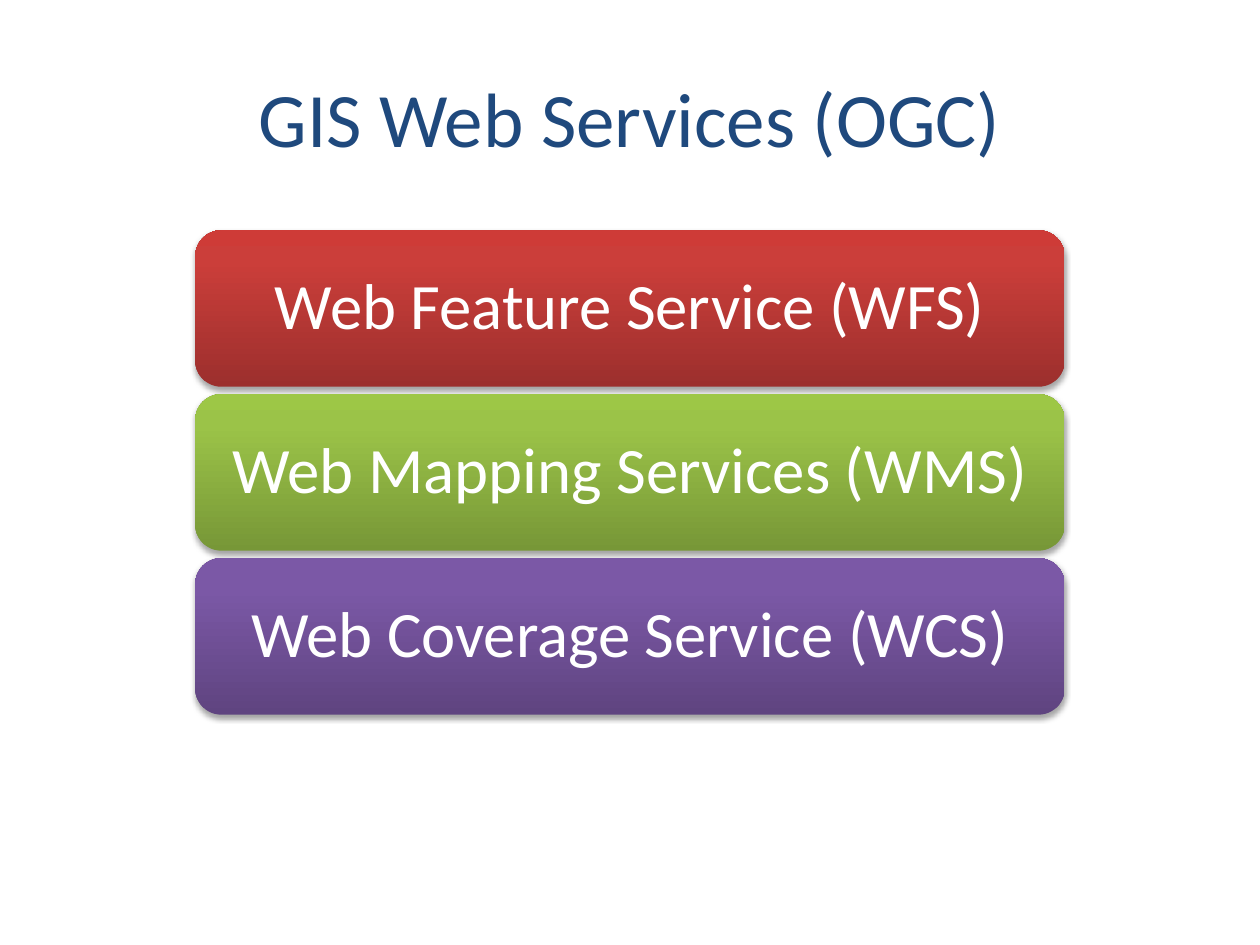
from lxml import etree
from pptx import Presentation
from pptx.dml.color import RGBColor
from pptx.enum import shapes, text
from pptx.oxml.ns import qn
from pptx.util import Pt

NAVY = RGBColor(0x1F, 0x49, 0x7D)
WHITE = RGBColor(0xFF, 0xFF, 0xFF)
BLACK = RGBColor(0, 0, 0)
RED = [RGBColor(0x9C, 0x2F, 0x2D), RGBColor(0xCB, 0x3E, 0x3A), RGBColor(0xCE, 0x3B, 0x37)]
GREEN = [RGBColor(0x77, 0x97, 0x37), RGBColor(0x9B, 0xC3, 0x48), RGBColor(0x9D, 0xC7, 0x46)]
PURPLE = [RGBColor(0x5F, 0x44, 0x80), RGBColor(0x7B, 0x58, 0xA6), RGBColor(0x7C, 0x57, 0xA8)]
STOPS = (0, 80, 100)
FONT = "Calibri"
SERVICES = [
    ("Web Feature Service (WFS)", RED),
    ("Web Mapping Services (WMS)", GREEN),
    ("Web Coverage Service (WCS)", PURPLE),
]


def add(parent, tag, **attrs):
    return etree.SubElement(parent, qn(tag), {k: str(v) for k, v in attrs.items()})


def shade(shape, colors):
    """Fill from bottom to top with one colour at each of STOPS."""
    shape.fill.gradient()
    shape.fill.gradient_angle = 90
    stops = shape._element.spPr.find(".//" + qn("a:gsLst"))
    for old in list(stops):
        stops.remove(old)
    for pos, color in zip(STOPS, colors):
        add(add(stops, "a:gs", pos=pos * 1000), "a:srgbClr", val=color)


def drop_shadow(shape):
    shape.shadow.inherit = False
    effects = shape._element.spPr.find(qn("a:effectLst"))
    outer = add(effects, "a:outerShdw", blurRad=Pt(3.1), dist=Pt(1.8),
                dir=90 * 60000, rotWithShape=0)
    add(add(outer, "a:srgbClr", val=BLACK), "a:alpha", val=35000)


def write(frame, words, size, color):
    frame.word_wrap = True
    frame.vertical_anchor = text.MSO_ANCHOR.MIDDLE
    para = frame.paragraphs[0]
    para.text = words
    para.alignment = text.PP_ALIGN.CENTER
    para.font.name = FONT
    para.font.size = Pt(size)
    para.font.color.rgb = color
    return para


def place_title(slide, left, top, width, height):
    title = slide.shapes.title
    title.left, title.top = Pt(left), Pt(top)
    title.width, title.height = Pt(width), Pt(height)
    write(title.text_frame, "GIS Web Services (OGC)", 44, NAVY)


def stack_bars(slide, left, top, width, height, gap=4.3):
    """Share the height of the box among the services."""
    count = len(SERVICES)
    tall = (height - gap * (count - 1)) / count
    for i, (name, colors) in enumerate(SERVICES):
        bar = slide.shapes.add_shape(
            shapes.MSO_SHAPE.ROUNDED_RECTANGLE,
            Pt(left), Pt(top + i * (tall + gap)), Pt(width), Pt(tall))
        shade(bar, colors)
        bar.line.fill.background()
        drop_shadow(bar)
        frame = bar.text_frame
        frame.margin_left = frame.margin_right = Pt(7)
        frame.margin_top = frame.margin_bottom = Pt(5.8)
        write(frame, name, 37, WHITE).line_spacing = 0.9


def main():
    deck = Presentation()
    deck.slide_width, deck.slide_height = Pt(720), Pt(540)
    slide = deck.slides.add_slide(deck.slide_layouts[5])
    place_title(slide, 36, 21.6, 648, 90)
    stack_bars(slide, 111.6, 131.6, 496.8, 276.8)
    deck.save("out.pptx")


if __name__ == "__main__":
    main()
